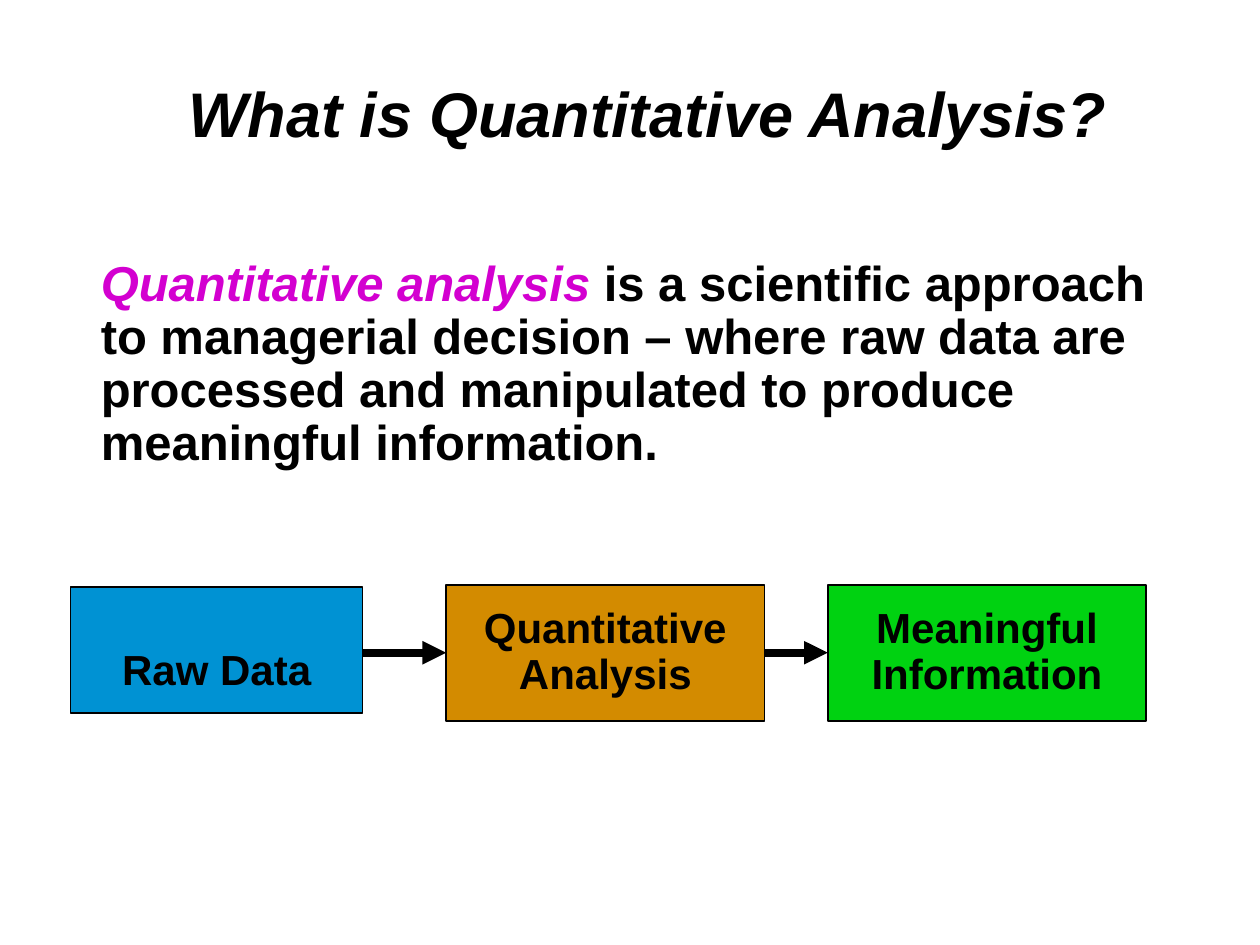
from dataclasses import dataclass
from lxml.etree import SubElement
from pptx import Presentation
from pptx.dml.color import RGBColor
from pptx.enum.shapes import MSO_CONNECTOR, MSO_SHAPE
from pptx.enum.text import MSO_ANCHOR, MSO_AUTO_SIZE, PP_ALIGN
from pptx.oxml.ns import qn
from pptx.util import Pt


@dataclass(frozen=True)
class Theme:
    font: str = "Arial"
    ink: str = "000000"
    accent: str = "D300D0"
    raw: str = "0092D3"
    analysis: str = "D38B00"
    information: str = "00D211"
    title_size: int = 36
    body_size: int = 28
    box_size: int = 24


THEME = Theme()


def style(r, size, color=THEME.ink, italic=False):
    r.font.name = THEME.font
    r.font.size = Pt(size)
    r.font.bold = True
    r.font.italic = italic
    r.font.color.rgb = RGBColor.from_string(color)


def place(sp, x, y, w, h):
    sp.left, sp.top, sp.width, sp.height = Pt(x), Pt(y), Pt(w), Pt(h)


def add_title(s, text):
    sp = s.shapes.title
    place(sp, 54, 38.9, 612, 56.2)
    tf = sp.text_frame
    tf.text = text
    tf.auto_size = MSO_AUTO_SIZE.NONE
    tf.vertical_anchor = MSO_ANCHOR.MIDDLE
    tf.margin_left = Pt(27.2)
    p = tf.paragraphs[0]
    p.alignment = PP_ALIGN.CENTER
    p.line_spacing = 0.9
    style(p.runs[0], THEME.title_size, italic=True)


def add_definition(s, term, meaning):
    sp = s.placeholders[1]
    place(sp, 50.4, 144.7, 619.2, 137.5)
    tf = sp.text_frame
    tf.auto_size = MSO_AUTO_SIZE.NONE
    p = tf.paragraphs[0]
    p.line_spacing = 0.9
    pPr = p._p.get_or_add_pPr()
    pPr.set("marL", "0")
    pPr.set("indent", "0")
    SubElement(pPr, qn("a:buNone"))
    for text, color, italic in ((term, THEME.accent, True), (meaning, THEME.ink, False)):
        r = p.add_run()
        r.text = text
        style(r, THEME.body_size, color, italic)


def add_box(s, text, color, x, y, w, h, border=1, spacing=0.9, anchor=MSO_ANCHOR.MIDDLE):
    sp = s.shapes.add_shape(MSO_SHAPE.RECTANGLE, Pt(x), Pt(y), Pt(w), Pt(h))
    sp.shadow.inherit = False
    sp.fill.solid()
    sp.fill.fore_color.rgb = RGBColor.from_string(color)
    sp.line.color.rgb = RGBColor.from_string(THEME.ink)
    sp.line.width = Pt(border)
    tf = sp.text_frame
    tf.text = text
    tf.vertical_anchor = anchor
    for p in tf.paragraphs:
        p.alignment = PP_ALIGN.CENTER
        p.line_spacing = spacing
        style(p.runs[0], THEME.box_size)


def add_arrow(s, x, y, length):
    c = s.shapes.add_connector(MSO_CONNECTOR.STRAIGHT, Pt(x), Pt(y), Pt(x + length), Pt(y))
    c.line.color.rgb = RGBColor.from_string(THEME.ink)
    c.line.width = Pt(4.5)
    SubElement(c.line._get_or_add_ln(), qn("a:tailEnd"), type="triangle")
    SubElement(c._element.spPr, qn("a:effectLst"))


def main():
    prs = Presentation()
    prs.slide_width, prs.slide_height = Pt(720), Pt(540)
    s = prs.slides.add_slide(prs.slide_layouts[1])
    add_title(s, "What is Quantitative Analysis?")
    add_definition(
        s,
        "Quantitative analysis",
        " is a scientific approach to managerial decision – where raw data are "
        "processed and manipulated to produce meaningful information.",
    )

    arrow = 48.2
    steps = (
        ("Quantitative\nAnalysis", THEME.analysis, 254.9),
        ("Meaningful\nInformation", THEME.information, 473),
    )
    for text, color, x in reversed(steps):
        add_arrow(s, x - arrow, 373, arrow)
        add_box(s, text, color, x, 334.1, 182, 77.8)
    add_box(s, "Raw Data", THEME.raw, 40.3, 335.5, 167, 72,
            border=0.75, spacing=2, anchor=MSO_ANCHOR.TOP)
    prs.save("out.pptx")


if __name__ == "__main__":
    main()
